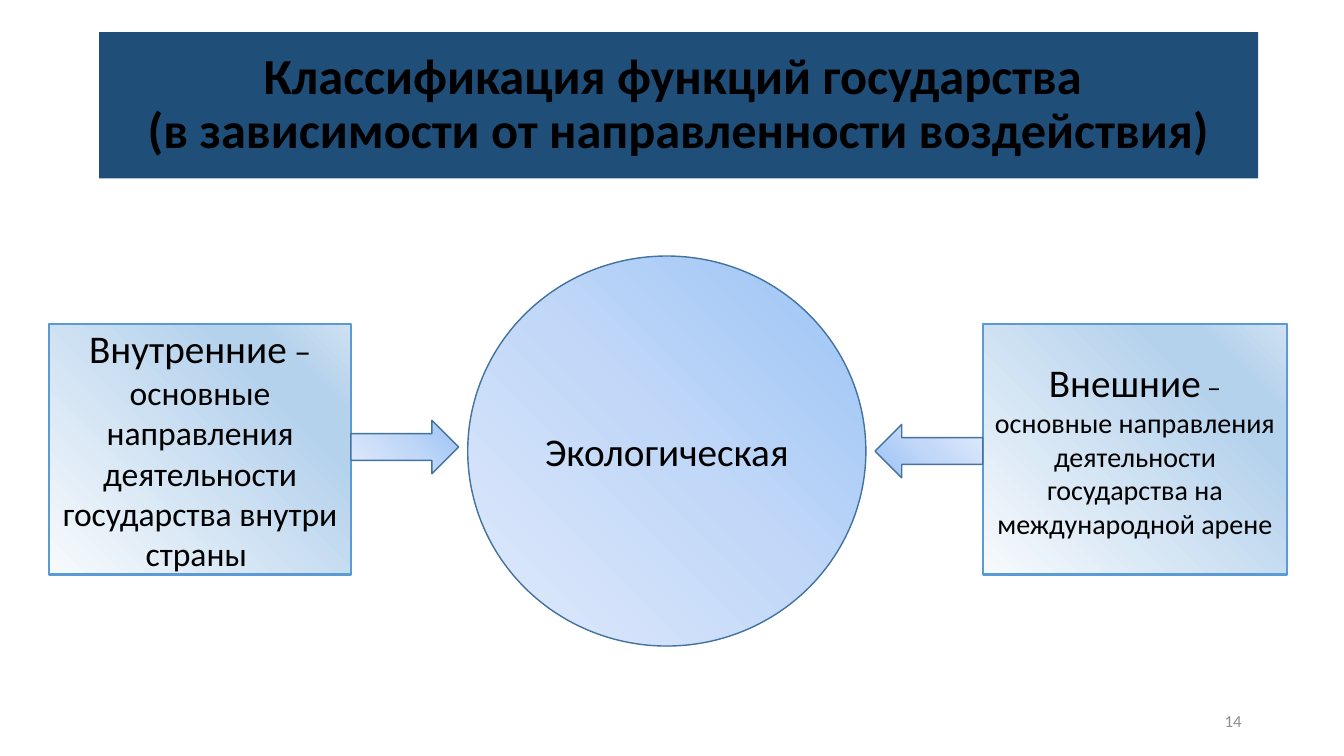
from lxml.etree import SubElement
from pptx import Presentation
from pptx.dml.color import RGBColor
from pptx.enum.shapes import MSO_SHAPE as Preset
from pptx.enum.text import MSO_ANCHOR as Anchor, PP_ALIGN as Align
from pptx.oxml.ns import qn
from pptx.util import Pt

FONT = "Calibri"
BOX_STOPS = [(0, "F7FAFD"), (74, "B5D2EC"), (83, "B5D2EC"), (100, "CEE1F2")]
CENTRE_STOPS = [(0, "9AC3F5"), (50, "C2D8F8"), (100, "E1EBFB")]


def color(code):
    return RGBColor.from_string(code)


def add_block(slide, preset, bounds):
    block = slide.shapes.add_shape(preset, *map(Pt, bounds))
    block.shadow.inherit = False
    return block


def paint_gradient(block, stops, angle):
    block.fill.gradient()
    block.fill.gradient_angle = angle
    stop_list = block.element.xpath(".//a:gsLst")[0]
    for stop in list(stop_list):
        stop_list.remove(stop)
    for percent, code in stops:
        stop = SubElement(stop_list, qn("a:gs"), pos=str(percent * 1000))
        SubElement(stop, qn("a:srgbClr"), val=code)


def outline(block, code, width):
    block.line.color.rgb = color(code)
    block.line.width = Pt(width)


def write(block, text, size, code="000000", align=Align.CENTER):
    frame = block.text_frame
    frame.word_wrap = True
    frame.vertical_anchor = Anchor.MIDDLE
    paragraph = frame.paragraphs[0]
    paragraph.text = text
    paragraph.alignment = align
    paragraph.font.name = FONT
    paragraph.font.size = Pt(size)
    paragraph.font.color.rgb = color(code)
    return paragraph


def add_title(slide, text):
    title = add_block(slide, Preset.RECTANGLE, (70.8, 23, 828, 104.4))
    title.fill.solid()
    title.fill.fore_color.rgb = color("1F4E79")
    title.line.fill.background()
    paragraph = write(title, text, 36)
    paragraph.font.bold = True
    paragraph.line_spacing = 0.9


def add_definition(slide, left, width, term, meaning, meaning_size):
    definition = add_block(slide, Preset.RECTANGLE, (left, 231.1, width, 179.3))
    paint_gradient(definition, BOX_STOPS, 45)
    outline(definition, "5B9BD5", 1.5)
    paragraph = write(definition, term, meaning_size)
    paragraph.runs[0].font.size = Pt(28)
    paragraph.add_run().text = meaning


def add_centre_block(slide, preset, bounds):
    block = add_block(slide, preset, bounds)
    paint_gradient(block, CENTRE_STOPS, 225)
    outline(block, "43739E", 1)
    return block


def add_page_number(slide, number):
    page_number = slide.shapes.add_textbox(Pt(678), Pt(500.5), Pt(216), Pt(28.8))
    write(page_number, number, 12, "8C8C8C", Align.RIGHT)


def main():
    deck = Presentation()
    deck.slide_width, deck.slide_height = Pt(960), Pt(540)
    slide = deck.slides.add_slide(deck.slide_layouts[6])

    add_title(slide, "Классификация функций государства \v"
                     "(в зависимости от направленности воздействия)")
    add_definition(slide, 35.3, 215.3, "Внутренние",
                   " – основные направления деятельности государства внутри страны ", 24)
    add_definition(slide, 702, 217.4, "Внешние",
                   " – основные направления деятельности государства на международной арене", 20)
    for left, top, rotation in [(250.6, 300.2, 0), (625, 303.1, 180)]:
        arrow = add_centre_block(slide, Preset.RIGHT_ARROW, (left, top, 77, 38.2))
        arrow.rotation = rotation
    function = add_centre_block(slide, Preset.OVAL, (334.1, 182.9, 284.4, 278.6))
    write(function, "Экологическая", 28)
    add_page_number(slide, "14")

    deck.save("out.pptx")


if __name__ == "__main__":
    main()
